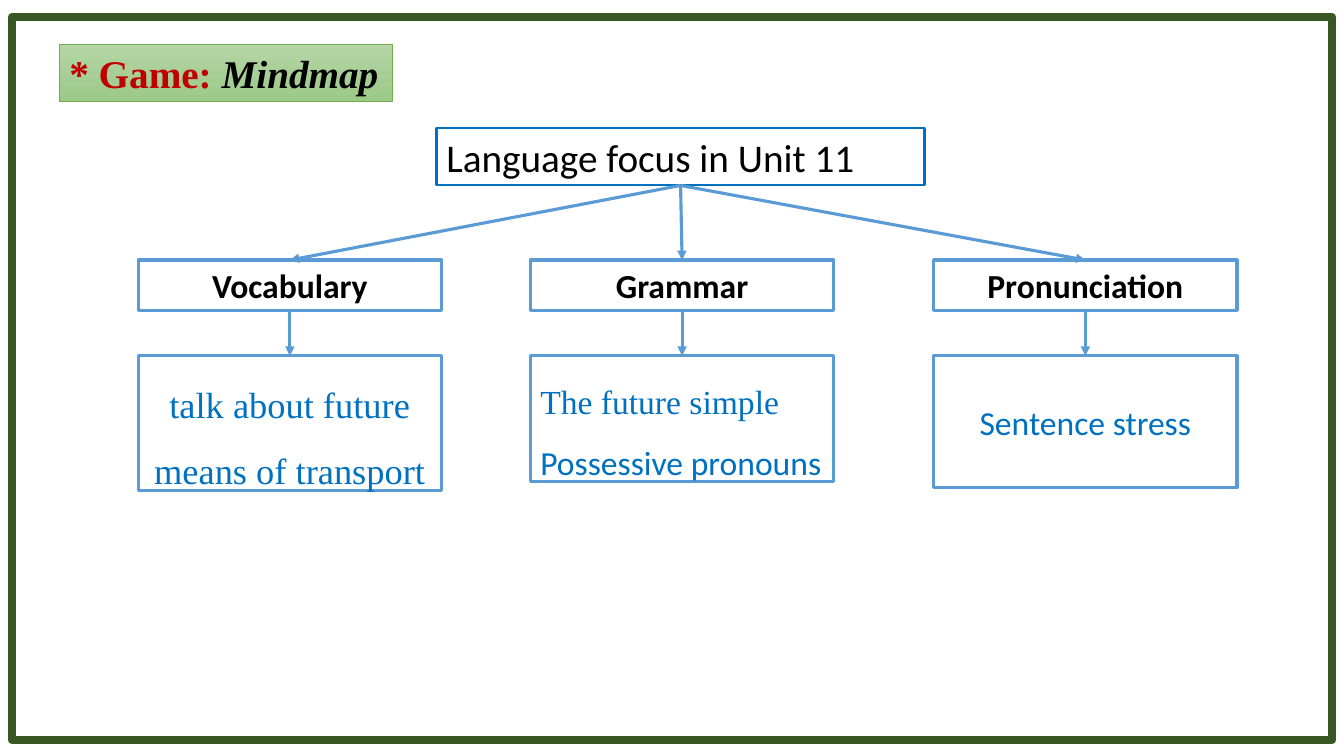
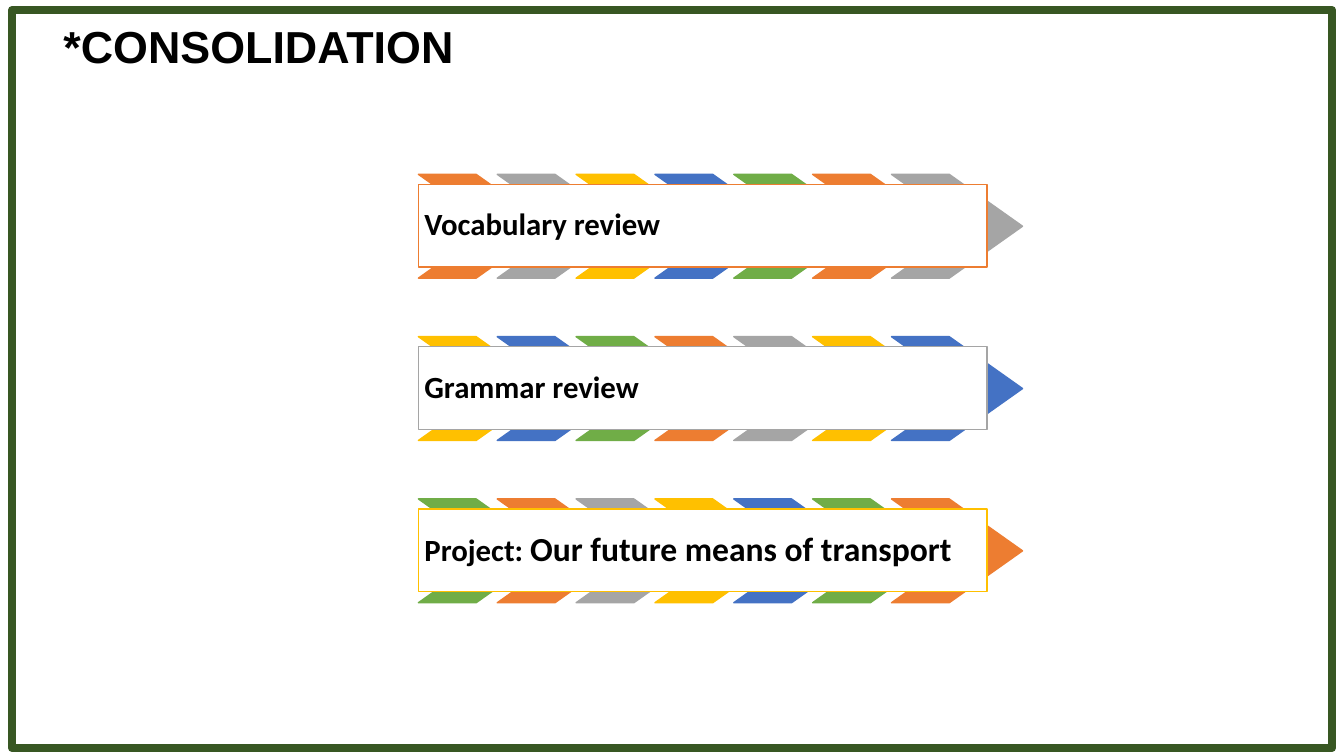
from dataclasses import dataclass

from lxml import etree
from pptx import Presentation
from pptx.dml.color import RGBColor
from pptx.enum.shapes import MSO_CONNECTOR, MSO_SHAPE
from pptx.enum.text import MSO_ANCHOR, PP_ALIGN
from pptx.oxml.ns import qn
from pptx.util import Inches, Pt

RECTANGLE, CHEVRON = MSO_SHAPE.RECTANGLE, MSO_SHAPE.CHEVRON
PROCESS = MSO_SHAPE.FLOWCHART_PROCESS
STRAIGHT = MSO_CONNECTOR.STRAIGHT
TOP, MIDDLE = MSO_ANCHOR.TOP, MSO_ANCHOR.MIDDLE
LEFT, CENTER = PP_ALIGN.LEFT, PP_ALIGN.CENTER

# Shared colours and fonts
BLACK, WHITE, RED = "000000", "FFFFFF", "C00000"
BLUE, SKY, GREEN, DARK_GREEN = "0070C0", "5B9BD5", "70AD47", "385723"
CYCLE = ("ED7D31", "A5A5A5", "FFC000", "4472C4", GREEN)
SANS, SERIF, TITLE_FONT = "Calibri", "Times New Roman", "Arial"


@dataclass(frozen=True)
class Area:
    left: float
    top: float
    width: float
    height: float

    @property
    def middle(self) -> float:
        return self.left + self.width / 2

    @property
    def bottom(self) -> float:
        return self.top + self.height

    def lengths(self) -> list:
        return [Inches(v) for v in (self.left, self.top, self.width, self.height)]


@dataclass(frozen=True)
class Span:
    text: str
    size: float
    font: str = SANS
    color: str = BLACK
    bold: bool = False
    italic: bool = False


@dataclass(frozen=True)
class Branch:
    left: float
    heading: str
    height: float
    details: tuple
    align: PP_ALIGN = CENTER
    anchor: MSO_ANCHOR = TOP
    spacing: float = 1.5


BRANCHES = (
    Branch(1.37, "Vocabulary", 1.34,
           (Span("talk about future means of transport", 26, SERIF, BLUE),)),
    Branch(5.26, "Grammar", 1.25,
           (Span("The future simple", 24, SERIF, BLUE),
            Span("Possessive pronouns", 24, SANS, BLUE)), align=LEFT),
    Branch(9.26, "Pronunciation", 1.31,
           (Span("Sentence stress", 24, SANS, BLUE),), anchor=MIDDLE, spacing=1),
)
REVIEWS = (
    (Span("Vocabulary review", 22, bold=True),),
    (Span("Grammar review", 22, bold=True),),
    (Span("Project: ", 22, bold=True),
     Span("Our future means of transport", 24, bold=True)),
)


def rgb(color: str) -> RGBColor:
    return RGBColor.from_string(color)


def add_box(page, area: Area, line: str, weight: float, fill: str | None = WHITE,
            preset: MSO_SHAPE = RECTANGLE):
    box = page.shapes.add_shape(preset, *area.lengths())
    box.shadow.inherit = False
    if fill:
        box.fill.solid()
        box.fill.fore_color.rgb = rgb(fill)
    else:
        box.fill.background()
    box.line.color.rgb = rgb(line)
    box.line.width = Pt(weight)
    return box


def write(box, paragraphs, align: PP_ALIGN = LEFT, anchor: MSO_ANCHOR = TOP,
          spacing: float = 1.0, wrap: bool = True) -> None:
    frame = box.text_frame
    frame.word_wrap = wrap
    frame.vertical_anchor = anchor
    for index, spans in enumerate(paragraphs):
        para = frame.add_paragraph() if index else frame.paragraphs[0]
        para.alignment = align
        para.line_spacing = spacing
        for span in spans:
            run = para.add_run()
            run.text = span.text
            run.font.name = span.font
            run.font.size = Pt(span.size)
            run.font.bold = span.bold
            run.font.italic = span.italic
            run.font.color.rgb = rgb(span.color)


def add_arrow(page, x1: float, y1: float, x2: float, y2: float) -> None:
    arrow = page.shapes.add_connector(
        STRAIGHT, Inches(x1), Inches(y1), Inches(x2), Inches(y2))
    arrow.line.color.rgb = rgb(SKY)
    arrow.line.width = Pt(2.25)
    etree.SubElement(arrow.line._get_or_add_ln(), qn("a:tailEnd"), type="triangle")
    etree.SubElement(arrow._element.spPr, qn("a:effectLst"))


def add_border(page, top: float, height: float) -> None:
    add_box(page, Area(0.12, top, 13.09, height), DARK_GREEN, 6, None, PROCESS)


def build_mindmap(page) -> None:
    # Root topic
    root = Area(4.33, 1.27, 4.84, 0.57)
    write(add_box(page, root, BLUE, 1.5),
          [[Span("Language focus in Unit 11", 28)]])

    # Branches with their details
    for branch in BRANCHES:
        heading = Area(branch.left, 2.58, 3.01, 0.5)
        detail = Area(branch.left, 3.53, 3.01, branch.height)
        write(add_box(page, heading, SKY, 2.25),
              [[Span(branch.heading, 24, bold=True)]], CENTER)
        write(add_box(page, detail, SKY, 2.25),
              [[span] for span in branch.details],
              branch.align, branch.anchor, branch.spacing)
        add_arrow(page, root.middle, root.bottom, heading.middle, heading.top)
        add_arrow(page, heading.middle, heading.bottom, detail.middle, detail.top)

    add_border(page, 0.17, 7.17)

    # Game label with a soft green gradient
    label = add_box(page, Area(0.59, 0.44, 3.3, 0.57), GREEN, 0.5)
    label.fill.gradient()
    label.fill.gradient_angle = 270
    for stop, position, color in zip(label.fill.gradient_stops, (0, 1),
                                     ("B5D5A7", "9CC987")):
        stop.position = position
        stop.color.rgb = rgb(color)
    write(label, [[Span("* Game: ", 28, SERIF, RED, True),
                   Span("Mindmap", 28, SERIF, BLACK, True, True)]], wrap=False)


def build_consolidation(page) -> None:
    title = page.shapes.add_textbox(*Area(0.53, 0.14, 4.52, 0.64).lengths())
    write(title, [[Span("*CONSOLIDATION", 32, TITLE_FONT, bold=True)]])

    # Review bars, the chevron colours running on from row to row
    chevrons = 7
    for row, spans in enumerate(REVIEWS):
        top = 1.73 + row * 1.61
        for column in range(chevrons):
            color = CYCLE[(row * chevrons + column) % len(CYCLE)]
            chevron = add_box(page, Area(4.15 + column * 0.782, top, 1.3, 1.03),
                              color, 1, color, CHEVRON)
            chevron.adjustments[0] = 0.706
        bar = add_box(page, Area(4.15, top + 0.1, 5.64, 0.82), CYCLE[row], 1)
        bar.text_frame.margin_left = bar.text_frame.margin_right = Inches(0.06)
        write(bar, [spans], anchor=MIDDLE, spacing=0.9)

    add_border(page, 0.1, 7.32)


def main() -> None:
    deck = Presentation()
    deck.slide_width, deck.slide_height = Inches(13.33), Inches(7.5)
    blank = deck.slide_layouts[6]
    for build in (build_mindmap, build_consolidation):
        build(deck.slides.add_slide(blank))
    deck.save("out.pptx")


if __name__ == "__main__":
    main()
